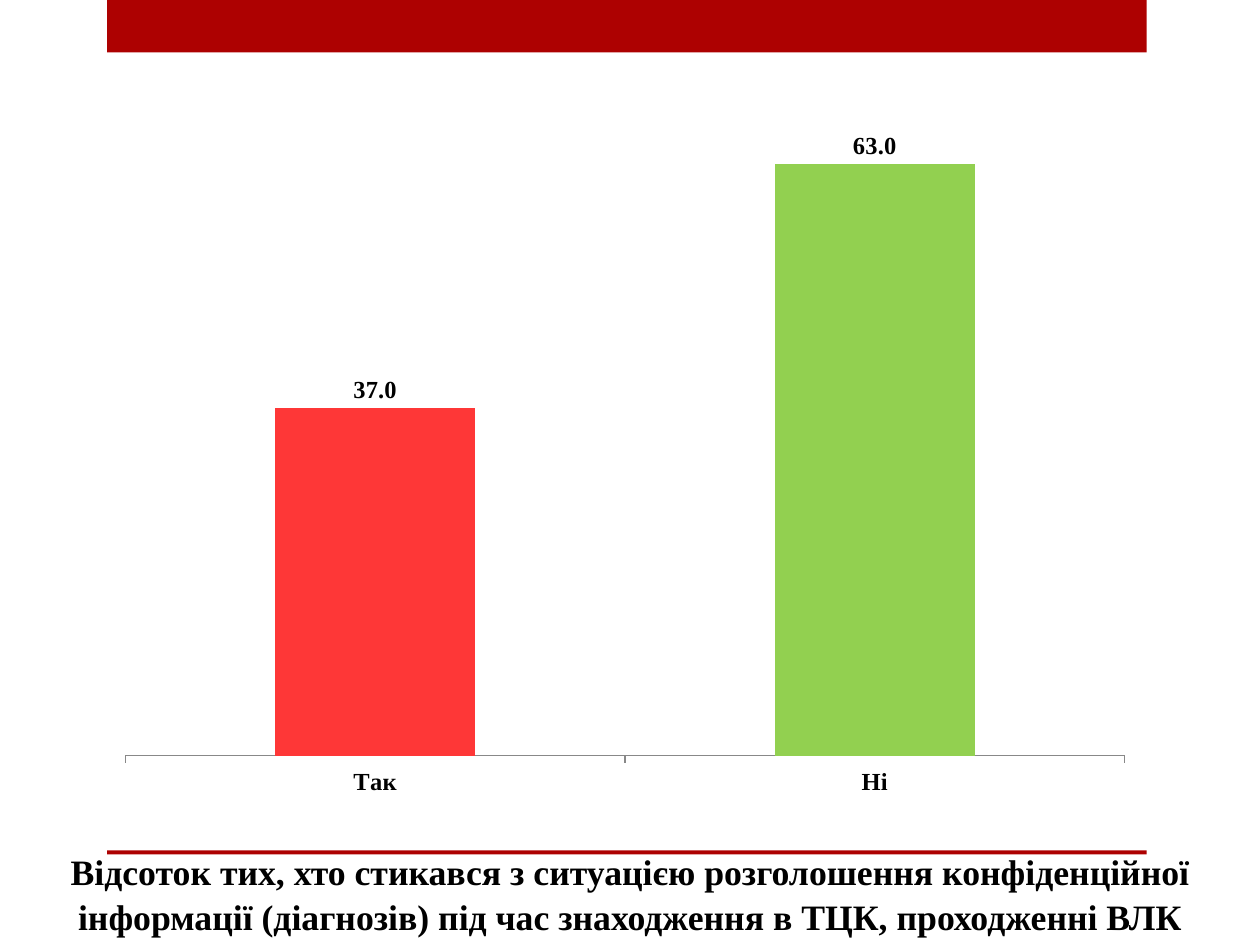
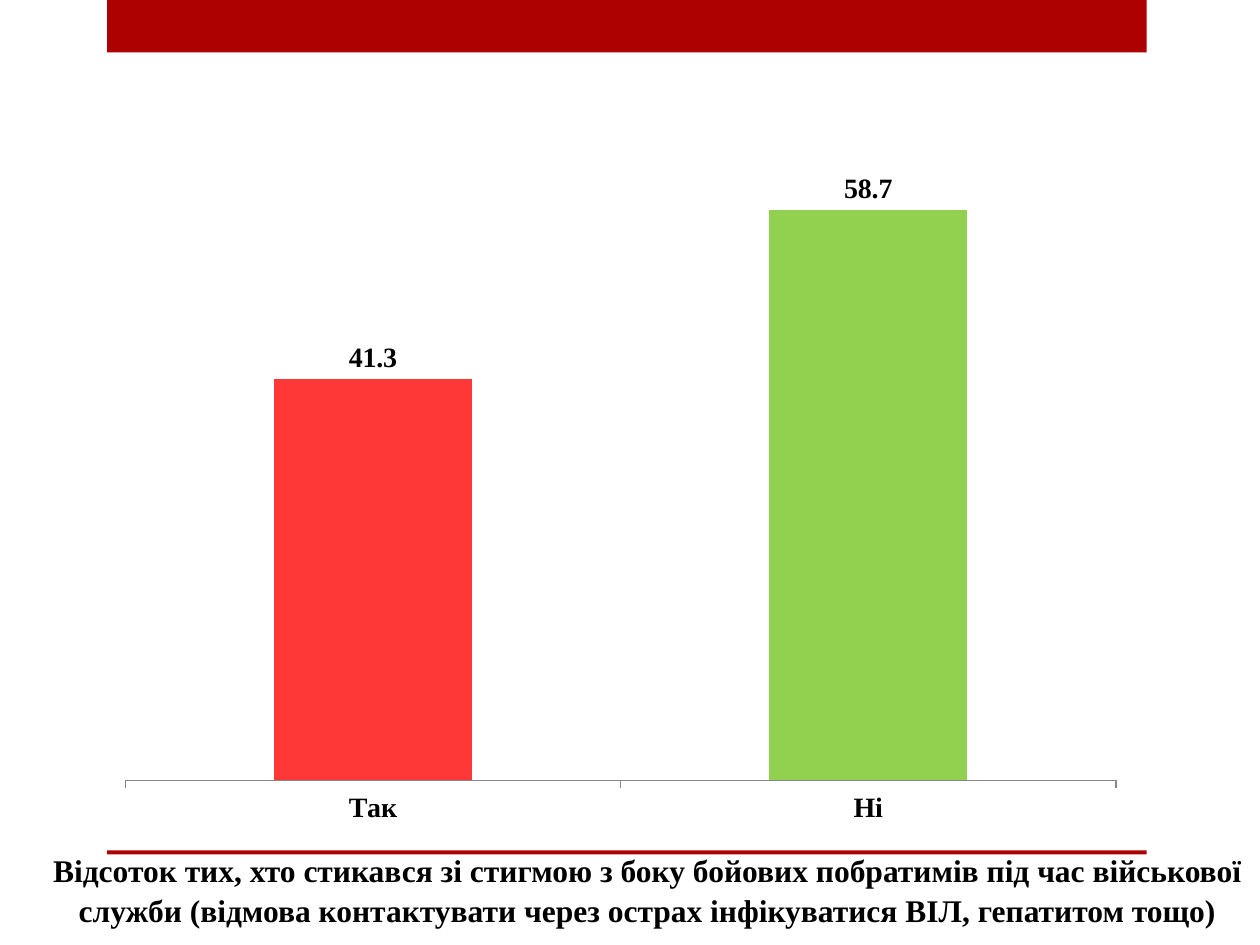
from pptx import Presentation
from pptx.chart.data import CategoryChartData
from pptx.dml.color import RGBColor
from pptx.enum.chart import XL_CHART_TYPE, XL_LABEL_POSITION, XL_TICK_MARK
from pptx.enum.shapes import MSO_SHAPE
from pptx.enum.text import MSO_ANCHOR, MSO_AUTO_SIZE, PP_ALIGN
from pptx.util import Pt

RECT = MSO_SHAPE.RECTANGLE
COLUMN = XL_CHART_TYPE.COLUMN_CLUSTERED
LABEL_ABOVE = XL_LABEL_POSITION.OUTSIDE_END
TICK_OUT = XL_TICK_MARK.OUTSIDE
BOTTOM = MSO_ANCHOR.BOTTOM
NO_FIT = MSO_AUTO_SIZE.NONE
CENTER = PP_ALIGN.CENTER

BAND_RED = RGBColor(0xAD, 0x01, 0x01)
YES_RED = RGBColor(0xFE, 0x37, 0x37)
NO_GREEN = RGBColor(0x92, 0xD0, 0x50)
AXIS_GRAY = RGBColor(0x88, 0x88, 0x88)
BLACK = RGBColor(0, 0, 0)

FONT = "Times New Roman"
TITLE_ONLY = 5
ANSWERS = ("Так", "Ні")
NUMBER_FORMAT = "###0.0"


class Deck:
    def __init__(self):
        self.prs = Presentation()
        self.prs.slide_width = Pt(720)
        self.prs.slide_height = Pt(540)
        self.s = None

    def slide(self):
        self.s = self.prs.slides.add_slide(self.prs.slide_layouts[TITLE_ONLY])
        self.band(0, 30)
        self.band(486, 2.2)

    def style(self, font, size):
        font.name = FONT
        font.size = Pt(size)
        font.bold = True
        font.color.rgb = BLACK

    def band(self, top, height):
        sp = self.s.shapes.add_shape(RECT, Pt(61.2), Pt(top), Pt(594), Pt(height))
        sp.shadow.inherit = False
        sp.fill.solid()
        sp.fill.fore_color.rgb = BAND_RED
        sp.line.fill.background()

    def title(self, text, left, top, size):
        sp = self.s.shapes.title
        sp.left, sp.top, sp.width, sp.height = Pt(left), Pt(top), Pt(700), Pt(50.4)
        tf = sp.text_frame
        tf.word_wrap = True
        tf.auto_size = NO_FIT
        tf.vertical_anchor = BOTTOM
        p = tf.paragraphs[0]
        p.alignment = CENTER
        p.line_spacing = 1.05
        r = p.add_run()
        r.text = text
        self.style(r.font, size)

    def chart(self, values, top, width, height, size):
        data = CategoryChartData(number_format=NUMBER_FORMAT)
        data.categories = ANSWERS
        data.add_series("Series 1", values)
        chart = self.s.shapes.add_chart(
            COLUMN, Pt(59.8), Pt(top), Pt(width), Pt(height), data).chart
        chart.has_legend = False
        chart.has_title = False
        self.style(chart.font, size)

        axis = chart.category_axis
        axis.major_tick_mark = TICK_OUT
        axis.format.line.color.rgb = AXIS_GRAY
        axis = chart.value_axis
        axis.visible = False
        axis.has_major_gridlines = False
        axis.minimum_scale = 0
        axis.maximum_scale = 70

        plot = chart.plots[0]
        plot.gap_width = 150
        plot.vary_by_categories = False
        plot.has_data_labels = True
        labels = plot.data_labels
        labels.show_value = True
        labels.number_format = NUMBER_FORMAT
        labels.number_format_is_linked = False
        labels.position = LABEL_ABOVE
        self.style(labels.font, size)

        series = plot.series[0]
        series.format.fill.solid()
        series.format.fill.fore_color.rgb = BAND_RED
        for i, color in enumerate((YES_RED, NO_GREEN)):
            fill = series.points[i].format.fill
            fill.solid()
            fill.fore_color.rgb = color


def main():
    deck = Deck()

    deck.slide()
    deck.title("Відсоток тих, хто стикався з ситуацією розголошення конфіденційної "
               "інформації (діагнозів) під час знаходження в ТЦК, проходженні ВЛК",
               left=10, top=489, size=20.4)
    deck.chart((37, 63), top=48.2, width=594.7, height=414.7, size=14)

    deck.slide()
    deck.title("Відсоток тих, хто стикався зі стигмою з боку бойових побратимів під час "
               "військової служби (відмова контактувати через острах інфікуватися ВІЛ, "
               "гепатитом тощо)",
               left=20, top=484, size=18)
    deck.chart((41.3, 58.7), top=49, width=589.7, height=430.6, size=16)

    deck.prs.save("out.pptx")


if __name__ == "__main__":
    main()
